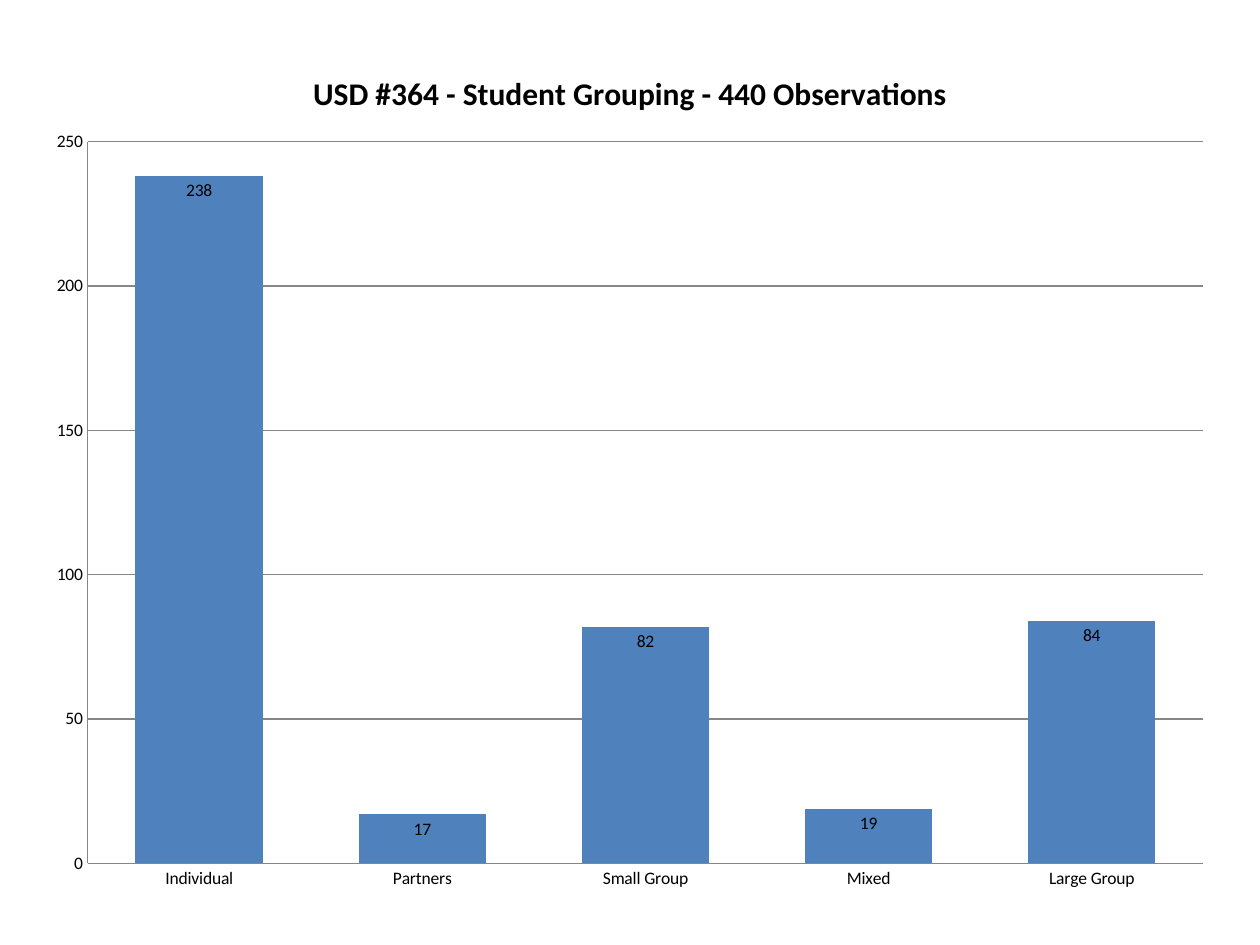
from lxml import etree
from pptx import Presentation
from pptx.chart.data import CategoryChartData
from pptx.dml.color import RGBColor
from pptx.enum.chart import XL_CHART_TYPE, XL_LABEL_POSITION, XL_TICK_MARK
from pptx.oxml.ns import qn
from pptx.util import Pt

COLUMNS = XL_CHART_TYPE.COLUMN_CLUSTERED
INSIDE_END = XL_LABEL_POSITION.INSIDE_END
NO_TICK = XL_TICK_MARK.NONE
BLACK = RGBColor(0x00, 0x00, 0x00)
BLUE = RGBColor(0x4F, 0x81, 0xBD)
GRAY = RGBColor(0x86, 0x86, 0x86)
FONT = "Calibri"


def write_title(frame, text, size=18, bold=True, color=BLACK):
    frame.text = text
    font = frame.paragraphs[0].runs[0].font
    font.name, font.size, font.bold = FONT, Pt(size), bold
    font.color.rgb = color


def place(part, following, settings):
    for old in part.findall(qn("c:layout")):
        part.remove(old)
    layout = etree.Element(qn("c:layout"))
    manual = etree.SubElement(layout, qn("c:manualLayout"))
    for key, value in settings.items():
        etree.SubElement(manual, qn(f"c:{key}")).set("val", str(value))
    part.find(qn(following)).addprevious(layout)


prs = Presentation()
prs.slide_width, prs.slide_height = Pt(720), Pt(540)
slide = prs.slides.add_slide(prs.slide_layouts[6])

grouping = CategoryChartData()
grouping.categories = ["Individual", "Partners", "Small Group", "Mixed", "Large Group"]
grouping.add_series("Series 1", (238, 17, 82, 19, 84))
chart = slide.shapes.add_chart(
    COLUMNS, Pt(18.72), Pt(23.04), Pt(682.56), Pt(494.64), grouping
).chart
chart.has_legend = False
chart.font.name, chart.font.size = FONT, Pt(10)
chart.font.color.rgb = BLACK

chart.has_title = True
write_title(chart.chart_title.text_frame, "USD #364 - Student Grouping - 440 Observations")

columns = chart.plots[0]
columns.gap_width, columns.overlap = 75, 40
columns.vary_by_categories = False
observations = columns.series[0]
observations.format.fill.solid()
observations.format.fill.fore_color.rgb = BLUE

columns.has_data_labels = True
counts = columns.data_labels
counts.show_value = True
counts.position = INSIDE_END
counts.font.name, counts.font.size = FONT, Pt(10)
counts.font.color.rgb = BLACK

scale = chart.value_axis
scale.minimum_scale, scale.maximum_scale, scale.major_unit = 0, 250, 50
scale.has_major_gridlines = True
for axis in (scale, chart.category_axis):
    axis.major_tick_mark = axis.minor_tick_mark = NO_TICK
for line in (scale.format.line, chart.category_axis.format.line,
             scale.major_gridlines.format.line):
    line.color.rgb = GRAY
    line.width = Pt(0.75)

chart_part = chart.element.find(qn("c:chart"))
place(chart_part.find(qn("c:title")), "c:overlay",
      {"xMode": "edge", "yMode": "edge", "x": 0.23, "y": 0.03})
place(chart_part.find(qn("c:plotArea")), "c:barChart",
      {"layoutTarget": "inner", "xMode": "edge", "yMode": "edge",
       "x": 0.046, "y": 0.117, "w": 0.934, "h": 0.834})

prs.save("out.pptx")
